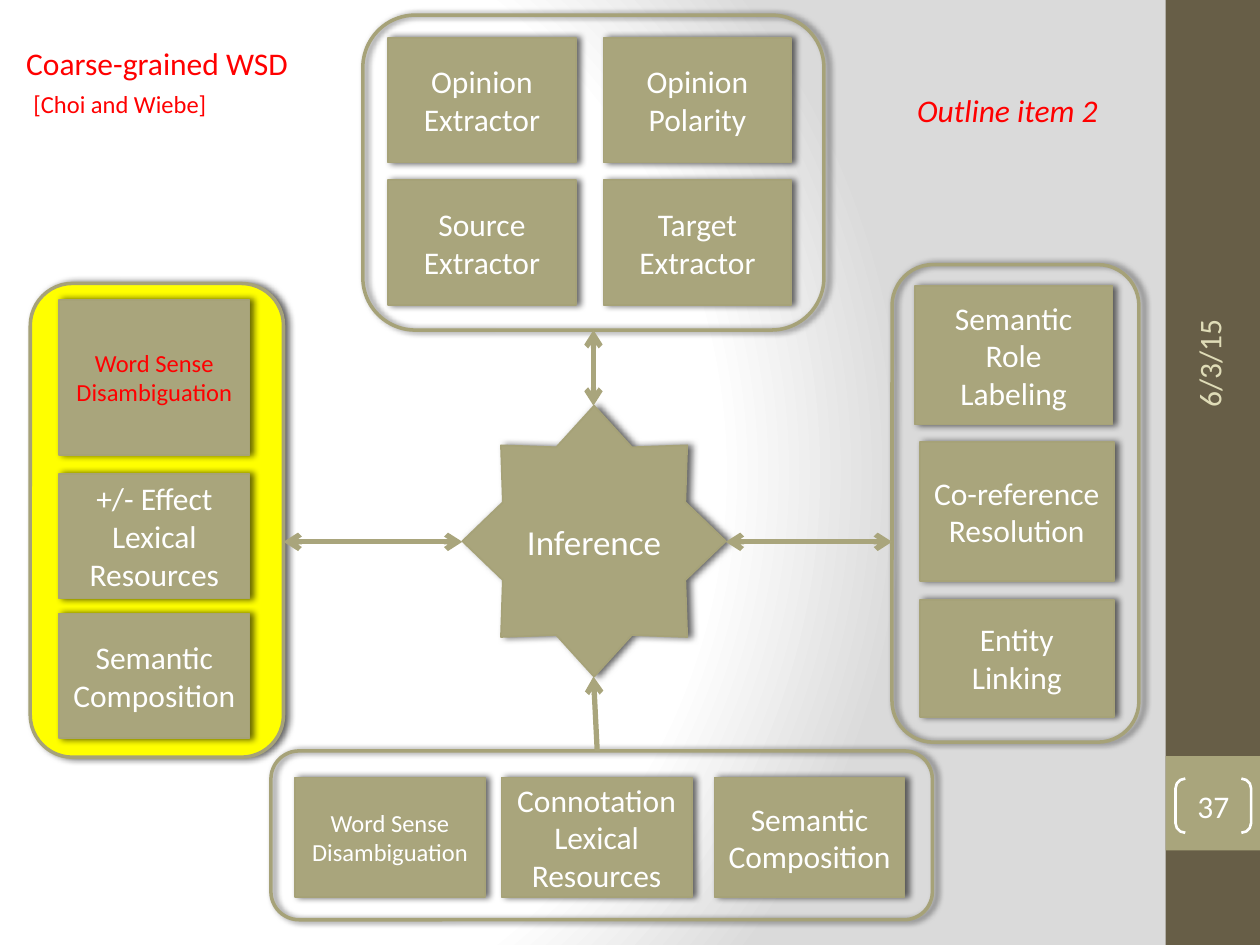
from lxml import etree
from pptx import Presentation
from pptx.dml.color import RGBColor
from pptx.enum.shapes import MSO_CONNECTOR as Link, MSO_SHAPE as Shape
from pptx.enum.text import MSO_ANCHOR as Anchor, PP_ALIGN as Align
from pptx.oxml import parse_xml
from pptx.oxml.ns import nsdecls, qn
from pptx.util import Inches, Pt

COLORS = {"olive": "A9A57C", "edge": "A6A278", "bar": "675E47", "date": "DFDCB7",
          "yellow": "FFFF00", "red": "FF0000", "white": "FFFFFF",
          "gray": "DADADA", "black": "000000"}
FONT = "Calibri"


def rgb(name):
    return RGBColor.from_string(COLORS[name])


def set_background(page):
    """Radial gradient, white on the left and gray on the right."""
    stops = "".join(
        f'<a:gs pos="{pos * 1000}"><a:srgbClr val="{COLORS[name]}"/></a:gs>'
        for pos, name in ((0, "white"), (75, "white"), (100, "gray")))
    page.background.fill.solid()
    properties = page.element.cSld.find(qn("p:bg")).find(qn("p:bgPr"))
    properties.replace(properties[0], parse_xml(
        f'<a:gradFill {nsdecls("a")} rotWithShape="1"><a:gsLst>{stops}</a:gsLst>'
        '<a:path path="circle"><a:fillToRect l="20000" t="50000" r="100000" b="50000"/>'
        '</a:path></a:gradFill>'))


def add_shadow(shape):
    effects = shape._element.spPr.find(qn("a:effectLst"))
    effects.append(parse_xml(
        f'<a:outerShdw {nsdecls("a")} blurRad="{Pt(4)}" dist="{Pt(2)}" dir="0" '
        f'rotWithShape="0"><a:srgbClr val="{COLORS["black"]}">'
        '<a:alpha val="60000"/></a:srgbClr></a:outerShdw>'))


def format_spans(para, size, color, italic=None):
    values = {"name": FONT, "size": Pt(size), "italic": italic}
    for span in para.runs:
        for key, value in values.items():
            setattr(span.font, key, value)
        span.font.color.rgb = rgb(color)


def write_centered(box, text, size, color="white"):
    frame = box.text_frame
    frame.word_wrap = True
    frame.vertical_anchor = Anchor.MIDDLE
    frame.text = text
    for para in frame.paragraphs:
        para.alignment = Align.CENTER
        format_spans(para, size, color)


def add_block(page, kind, place, fill=None, line=None, width=1, shadow=False):
    shape = page.shapes.add_shape(kind, *map(Inches, place))
    shape.shadow.inherit = False
    if fill:
        shape.fill.solid()
        shape.fill.fore_color.rgb = rgb(fill)
    else:
        shape.fill.background()
    if line:
        shape.line.color.rgb = rgb(line)
        shape.line.width = Pt(width)
    else:
        shape.line.fill.background()
    if shadow:
        add_shadow(shape)
    return shape


def add_module(page, place, text, size=18, color="white", kind=Shape.RECTANGLE):
    box = add_block(page, kind, place, "olive", "edge", shadow=True)
    write_centered(box, text, size, color)


def add_frame(page, place, fill=None):
    return add_block(page, Shape.ROUNDED_RECTANGLE, place, fill, "edge", 2, True)


def add_arrow(page, start, end, ends=("headEnd", "tailEnd")):
    arrow = page.shapes.add_connector(Link.STRAIGHT, *map(Inches, start + end))
    arrow.line.color.rgb = rgb("olive")
    arrow.line.width = Pt(3)
    for tag in ends:
        etree.SubElement(arrow.line._get_or_add_ln(), qn(f"a:{tag}")).set("type", "arrow")
    etree.SubElement(arrow._element.spPr, qn("a:effectLst"))
    return arrow


def add_label(page, place, lines, color, wrap=False, italic=None):
    """Each line is a list of (text, size) spans."""
    box = page.shapes.add_textbox(*map(Inches, place))
    frame = box.text_frame
    frame.word_wrap = wrap
    for index, spans in enumerate(lines):
        para = frame.add_paragraph() if index else frame.paragraphs[0]
        for text, size in spans:
            span = para.add_run()
            span.text = text
            span.font.size = Pt(size)
            span.font.name = FONT
            span.font.italic = italic
            span.font.color.rgb = rgb(color)
    return box


def add_sidebar(page):
    add_block(page, Shape.RECTANGLE, (9.25, 0, 0.75, 7.5), "bar")
    add_block(page, Shape.RECTANGLE, (9.25, 6, 0.75, 0.75), "olive")
    date = add_label(page, (8.26, 1.8, 2.67, 0.4), [[("6/3/15", 18)]], "date", wrap=True)
    date.rotation = 270
    number = add_block(page, Shape.DOUBLE_BRACKET, (9.33, 6.18, 0.6, 0.43),
                       line="white", width=1.5)
    number.adjustments[0] = 0.18
    for side in ("left", "top", "right", "bottom"):
        setattr(number.text_frame, f"margin_{side}", 0)
    write_centered(number, "37", 18)


def main():
    deck = Presentation()
    deck.slide_width, deck.slide_height = Inches(10), Inches(7.5)
    page = deck.slides.add_slide(deck.slide_layouts[6])
    set_background(page)
    add_sidebar(page)

    # Left group: sense and effect resources
    add_frame(page, (0.24, 2.25, 2.01, 3.76), "yellow")
    left, width = 0.47, 1.51
    add_module(page, (left, 2.38, width, 1.23), "Word Sense\nDisambiguation", 14, "red")
    add_module(page, (left, 3.76, width, 0.99), "+/- Effect\nLexical\nResources")
    add_module(page, (left, 4.87, width, 0.99), "Semantic Composition")

    # Right group: semantic analysis
    add_frame(page, (7.08, 2.1, 1.96, 3.79))
    add_module(page, (7.26, 2.27, 1.57, 1.1), "Semantic\nRole\nLabeling")
    add_module(page, (7.3, 3.51, 1.54, 1.1), "Co-reference\nResolution")
    add_module(page, (7.3, 4.76, 1.54, 0.93), "Entity Linking")

    # Top group: two-by-two grid of opinion modules
    top_frame = add_frame(page, (2.88, 0.12, 3.66, 2.5))
    grid = (("Opinion\nExtractor", "Opinion\nPolarity"),
            ("Source\nExtractor", "Target\nExtractor"))
    for row, names in enumerate(grid):
        for column, name in enumerate(names):
            add_module(page, (3.08 + 1.71 * column, 0.3 + 1.13 * row, 1.49, 0.99), name)

    # Bottom group: connotation resources
    add_frame(page, (2.15, 5.96, 5.25, 1.34))
    for x, name, size in ((2.34, "Word Sense\nDisambiguation", 14),
                          (3.98, "Connotation\nLexical\nResources", 18),
                          (5.67, "Semantic Composition", 18)):
        add_module(page, (x, 6.17, width, 0.95), name, size)

    # Inference star and its arrows
    add_module(page, (3.67, 3.22, 2.09, 2.15), "Inference", 20, kind=Shape.STAR_8_POINT)
    add_arrow(page, (4.71, 2.62), (4.71, 3.22)).begin_connect(top_frame, 2)
    add_arrow(page, (5.76, 4.3), (7.08, 4.3))
    add_arrow(page, (3.67, 4.3), (2.25, 4.3))
    add_arrow(page, (4.74, 5.96), (4.71, 5.37), ends=("tailEnd",))

    # Red annotations
    add_label(page, (0.11, 0.3, 2.35, 0.71),
              [[("Coarse-grained WSD", 18)], [(" ", 18), ("[Choi and Wiebe]", 14)]], "red")
    add_label(page, (7.18, 0.67, 1.71, 0.4), [[("Outline item 2", 18)]], "red", italic=True)

    deck.save("out.pptx")


if __name__ == "__main__":
    main()
